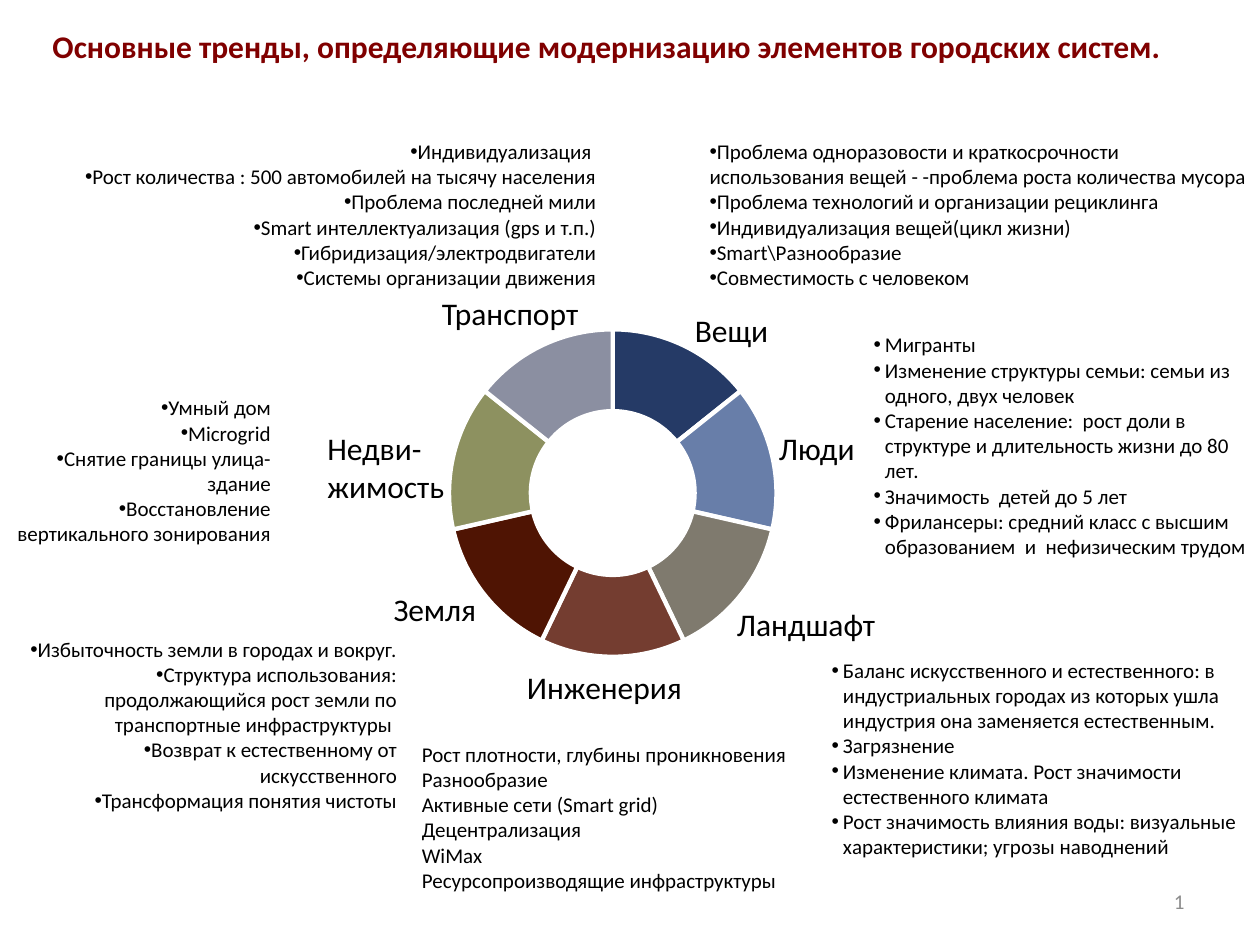
from dataclasses import dataclass

from lxml import etree
from pptx import Presentation
from pptx.chart.data import CategoryChartData
from pptx.dml.color import RGBColor
from pptx.enum.chart import XL_CHART_TYPE
from pptx.enum.text import MSO_ANCHOR, MSO_AUTO_SIZE, PP_ALIGN
from pptx.oxml import parse_xml
from pptx.oxml.ns import nsdecls, qn
from pptx.util import Inches, Pt

LEFT, RIGHT = PP_ALIGN.LEFT, PP_ALIGN.RIGHT
TOP, MIDDLE = MSO_ANCHOR.TOP, MSO_ANCHOR.MIDDLE
DOUGHNUT = XL_CHART_TYPE.DOUGHNUT
NO_AUTOSIZE = MSO_AUTO_SIZE.NONE

# The slide is a grid of 120 columns and 90 rows with square cells.
CELL = Inches(10) / 120
COMPARISON_LAYOUT = 4


@dataclass(frozen=True)
class Theme:
    font: str = "Calibri"
    heading_size: int = 18
    list_size: int = 12
    title: str = "800000"
    text: str = "000000"
    number: str = "8C8C8C"
    gap: str = "FFFFFF"


THEME = Theme()
TITLE = "Основные тренды, определяющие модернизацию элементов городских систем."

# Sector name, ring colour, label lines, label box (column, row, columns, rows)
SECTORS = [
    ("Вещи", "253A66", ["Вещи"], (65, 29, 57.6, 4.8)),
    ("Люди", "687EA9", ["Люди"], (73, 40.3, 9.7, 4.8)),
    ("Ландшафт", "7F7A6E", ["Ландшафт"], (69, 57, 15.7, 4.8)),
    ("Инженерия", "743D30", ["Инженерия"], (49, 63, 17.4, 4.8)),
    ("Земля", "4F1403", ["Земля"], (36.3, 55.6, 10.3, 4.8)),
    ("Недвижимость", "8D9160", ["Недви-", "жимость"], (30, 40.3, 13.7, 8.5)),
    ("Транспорт", "8B8FA1", ["Транспорт"], (40.9, 27.4, 15.6, 4.8)),
]

# Box, alignment, bullet, hanging indent in inches, items
TREND_LISTS = [
    ((82, 31, 38, 23), LEFT, True, 0.09, [
        "Мигранты",
        "Изменение структуры семьи: семьи из одного, двух человек",
        "Старение население:  рост доли в структуре и длительность жизни до 80 лет.",
        "Значимость  детей до 5 лет",
        "Фрилансеры: средний класс с высшим образованием  и  нефизическим трудом",
    ]),
    ((0, 37, 27, 15.7), RIGHT, True, 0, [
        "Умный дом",
        "Microgrid",
        "Снятие границы улица-здание",
        "Восстановление вертикального зонирования",
    ]),
    ((2, 12.6, 56, 15.7), RIGHT, True, 0, [
        "Индивидуализация ",
        "Рост количества : 500 автомобилей на тысячу населения",
        "Проблема последней мили",
        "Smart интеллектуализация (gps и т.п.)",
        "Гибридизация/электродвигатели",
        "Системы организации движения",
    ]),
    ((78, 62, 47, 20.6), LEFT, True, 0.09, [
        "Баланс искусственного и естественного: в индустриальных городах "
        "из которых ушла индустрия она заменяется естественным.",
        "Загрязнение",
        "Изменение климата. Рост значимости естественного климата",
        "Рост значимость влияния воды: визуальные характеристики; угрозы наводнений",
    ]),
    ((0, 60, 39, 18.1), RIGHT, True, 0, [
        "Избыточность земли в городах и вокруг.",
        "Структура использования: продолжающийся рост земли по "
        "транспортные инфраструктуры ",
        "Возврат к естественному от искусственного",
        "Трансформация понятия чистоты",
    ]),
    ((66.4, 12.6, 54, 15.7), LEFT, True, 0, [
        "Проблема одноразовости и краткосрочности использования вещей - "
        "-проблема роста количества мусора",
        "Проблема технологий и организации рециклинга",
        "Индивидуализация вещей(цикл жизни)",
        "Smart\\Разнообразие",
        "Совместимость с человеком",
    ]),
    ((39, 70, 60, 15.7), LEFT, False, 0, [
        "Рост плотности, глубины проникновения",
        "Разнообразие",
        "Активные сети (Smart grid)",
        "Децентрализация",
        "WiMax",
        "Ресурсопроизводящие инфраструктуры",
    ]),
]


def grid(*cells):
    return [round(cell * CELL) for cell in cells]


def style_font(font, size, color, bold=False):
    font.name, font.size, font.bold = THEME.font, Pt(size), bold
    font.color.rgb = RGBColor.from_string(color)


def set_bullet(paragraph, bullet, hanging):
    properties = paragraph._p.get_or_add_pPr()
    properties.set("marL", str(Inches(hanging)))
    properties.set("indent", str(-Inches(hanging)))
    if bullet:
        etree.SubElement(properties, qn("a:buFont")).set("typeface", "Arial")
        etree.SubElement(properties, qn("a:buChar")).set("char", "•")
    else:
        etree.SubElement(properties, qn("a:buNone"))


def fill_text(shape, box, lines, size, color=THEME.text, bold=False,
              align=LEFT, wrap=True):
    """Place a text box or placeholder and write one paragraph per line."""
    shape.left, shape.top, shape.width, shape.height = grid(*box)
    frame = shape.text_frame
    frame.auto_size = NO_AUTOSIZE
    frame.word_wrap = wrap
    frame.vertical_anchor = TOP
    for index, line in enumerate(lines):
        paragraph = frame.add_paragraph() if index else frame.paragraphs[0]
        paragraph.alignment = align
        paragraph.space_before = Pt(0)
        run = paragraph.add_run()
        run.text = line
        style_font(run.font, size, color, bold)
    return frame


def add_text_box(slide, box):
    return slide.shapes.add_textbox(*grid(*box))


def add_trend_lists(slide):
    """Use the body placeholders first, then text boxes for the other lists."""
    bodies = iter(list(slide.placeholders)[1:])
    for box, align, bullet, hanging, items in TREND_LISTS:
        shape = next(bodies, None) or add_text_box(slide, box)
        frame = fill_text(shape, box, items, THEME.list_size, align=align)
        for paragraph in frame.paragraphs:
            set_bullet(paragraph, bullet, hanging)


def add_ring(slide):
    data = CategoryChartData()
    data.categories = [name for name, *_ in SECTORS]
    data.add_series("Series 1", [14] * len(SECTORS))
    box = grid(33.4, 28.3, 52.6, 41.3)
    chart = slide.shapes.add_chart(DOUGHNUT, *box, data).chart
    chart.has_legend = chart.has_title = False
    style_font(chart.font, THEME.heading_size, THEME.text)
    plot = chart.plots[0]
    plot.vary_by_categories = True
    for index, (_, color, *_) in enumerate(SECTORS):
        sector = plot.series[0].points[index].format
        sector.fill.solid()
        sector.fill.fore_color.rgb = RGBColor.from_string(color)
        sector.line.color.rgb = RGBColor.from_string(THEME.gap)
        sector.line.width = Pt(2.5)
    set_plot_area(chart, x=0.178, y=0, w=0.593, h=0.904)


def set_plot_area(chart, **shares):
    """Fix the inner plot area and make the chart background transparent."""
    chart_element = chart._chartSpace.find(qn("c:chart"))
    plot_area = chart_element.find(qn("c:plotArea"))
    for old_layout in plot_area.findall(qn("c:layout")):
        plot_area.remove(old_layout)
    layout = etree.Element(qn("c:layout"))
    manual = etree.SubElement(layout, qn("c:manualLayout"))
    settings = {"layoutTarget": "inner", "xMode": "edge", "yMode": "edge", **shares}
    for name, value in settings.items():
        etree.SubElement(manual, qn(f"c:{name}")).set("val", str(value))
    plot_area.insert(0, layout)
    chart_element.addnext(parse_xml(
        f'<c:spPr {nsdecls("c", "a")}><a:noFill/><a:ln><a:noFill/></a:ln></c:spPr>'))


def add_slide_number(slide):
    box = (86, 83.4, 28, 4.8)
    frame = fill_text(add_text_box(slide, box), box, ["2"], THEME.list_size,
                      THEME.number, align=RIGHT)
    frame.vertical_anchor = MIDDLE
    run = frame.paragraphs[0].runs[0]._r
    field = etree.Element(qn("a:fld"), type="slidenum",
                          id="{B6F15528-21DE-4FAA-801E-634DDDAF4B2B}")
    run.addprevious(field)
    field.extend(list(run))
    run.getparent().remove(run)


def main():
    presentation = Presentation()
    presentation.slide_width, presentation.slide_height = grid(120, 90)
    slide = presentation.slides.add_slide(
        presentation.slide_layouts[COMPARISON_LAYOUT])
    fill_text(slide.shapes.title, (3.8, 2, 108.8, 4.8), [TITLE],
              THEME.heading_size, THEME.title, bold=True, wrap=False)
    add_ring(slide)
    for _, _, lines, box in SECTORS:
        fill_text(add_text_box(slide, box), box, lines, THEME.heading_size,
                  wrap=False)
    add_trend_lists(slide)
    add_slide_number(slide)
    presentation.save("out.pptx")


if __name__ == "__main__":
    main()
